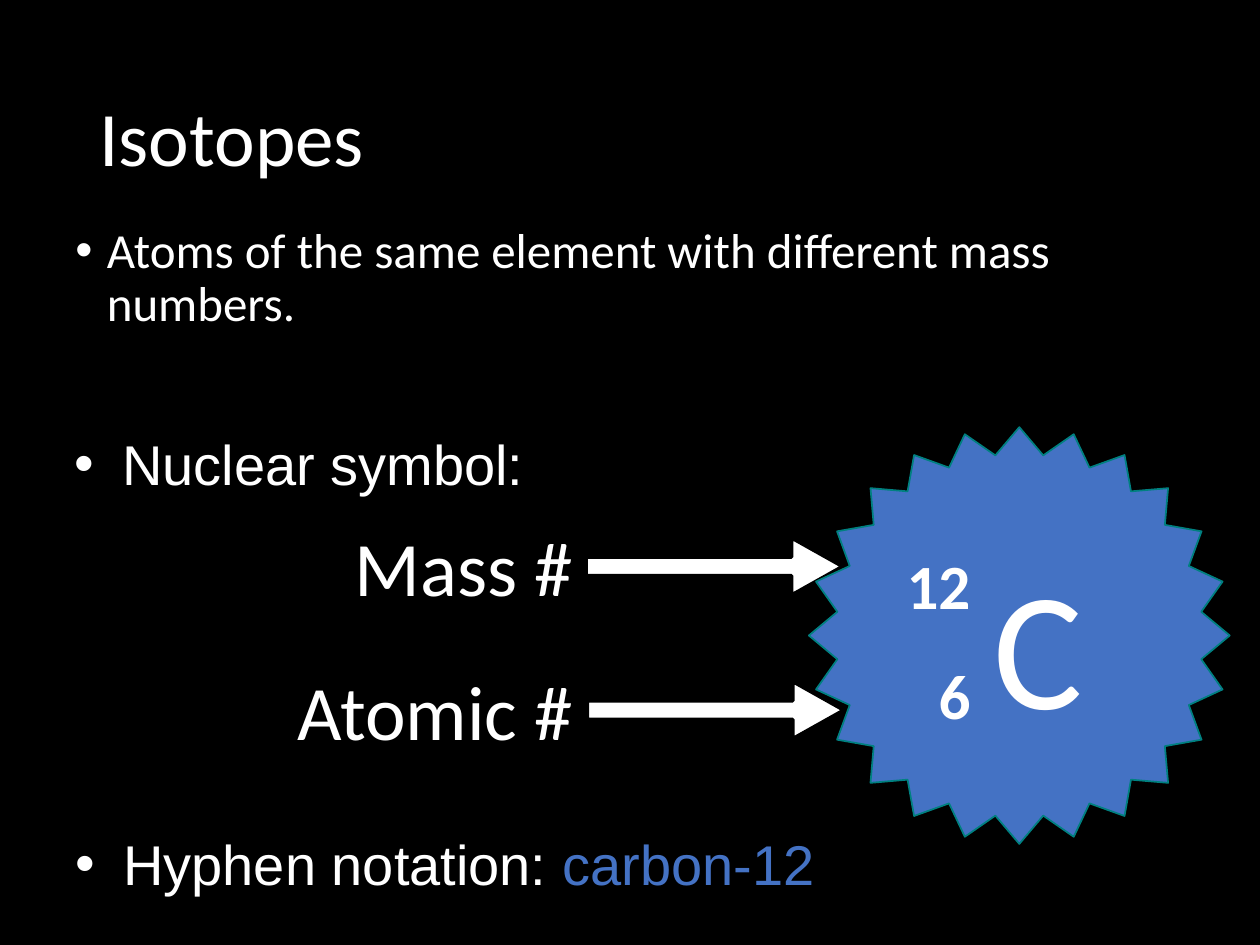
from dataclasses import dataclass

import pptx
import pptx.dml.color
import pptx.enum.shapes
import pptx.enum.text
import pptx.oxml
import pptx.oxml.ns
import pptx.util
from lxml import etree

WIDTH, HEIGHT = 10, 7.5
WHITE, BLACK, BLUE, TEAL = "FFFFFF", "000000", "4472C4", "008080"
ALIGN = pptx.enum.text.PP_ALIGN
SHAPES = pptx.enum.shapes.MSO_SHAPE


@dataclass
class Box:
    """Position and size as shares of the slide."""
    left: float
    top: float
    width: float
    height: float

    def place(self) -> list:
        return [pptx.util.Inches(share * side) for share, side in
                zip((self.left, self.top, self.width, self.height),
                    (WIDTH, HEIGHT, WIDTH, HEIGHT))]


@dataclass
class Style:
    size: float
    font: str = "Calibri"
    bold: bool = False
    align: ALIGN = ALIGN.LEFT
    indent: float = 0  # hanging indent in inches; above zero adds a bullet
    line_spacing: float = 1.0
    gap: float = 0  # points between paragraphs


@dataclass
class Label:
    text: str
    text_box: Box
    arrow_box: Box


def color(value: str) -> pptx.dml.color.RGBColor:
    return pptx.dml.color.RGBColor.from_string(value)


def format_paragraph(paragraph, style: Style) -> None:
    paragraph.font.size = pptx.util.Pt(style.size)
    paragraph.font.name = style.font
    paragraph.font.bold = style.bold
    paragraph.font.color.rgb = color(WHITE)
    paragraph.alignment = style.align
    paragraph.line_spacing = style.line_spacing
    if style.indent:
        properties = paragraph._p.get_or_add_pPr()
        indent = pptx.util.Inches(style.indent)
        properties.set("marL", str(indent))
        properties.set("indent", str(-indent))
        bullet_font = pptx.oxml.parse_xml(
            f'<a:buFont {pptx.oxml.ns.nsdecls("a")} typeface="Arial"/>')
        bullet = etree.Element(pptx.oxml.ns.qn("a:buChar"), char="•")
        properties.insert_element_before(bullet_font, "a:defRPr")
        properties.insert_element_before(bullet, "a:defRPr")


def add_text(slide, box: Box, lines: list[str], style: Style):
    shape = slide.shapes.add_textbox(*box.place())
    frame = shape.text_frame
    frame.word_wrap = True
    frame.text = "\n".join(lines)
    for number, paragraph in enumerate(frame.paragraphs):
        format_paragraph(paragraph, style)
        if number:
            paragraph.space_before = pptx.util.Pt(style.gap)
    return shape


def add_shape(slide, kind: SHAPES, box: Box, adjustments: list[float],
              fill: str, line: str, line_width: float) -> None:
    shape = slide.shapes.add_shape(kind, *box.place())
    shape.shadow.inherit = False
    for number, value in enumerate(adjustments):
        shape.adjustments[number] = value
    shape.fill.solid()
    shape.fill.fore_color.rgb = color(fill)
    shape.line.color.rgb = color(line)
    shape.line.width = pptx.util.Pt(line_width)


def main() -> None:
    presentation = pptx.Presentation()
    presentation.slide_width = pptx.util.Inches(WIDTH)
    presentation.slide_height = pptx.util.Inches(HEIGHT)
    slide = presentation.slides.add_slide(presentation.slide_layouts[5])
    slide.background.fill.solid()
    slide.background.fill.fore_color.rgb = color(BLACK)

    # Title
    title = slide.shapes.title
    title.left, title.top, title.width, title.height = Box(
        0.069, 0.053, 0.862, 0.193).place()
    title.text_frame.text = "Isotopes"
    title.text_frame.vertical_anchor = pptx.enum.text.MSO_ANCHOR.MIDDLE
    format_paragraph(title.text_frame.paragraphs[0],
                     Style(44, line_spacing=0.9))

    # Definition
    add_text(slide, Box(0.05, 0.233, 0.9, 0.22),
             ["Atoms of the same element with different mass numbers."],
             Style(28, indent=0.25, line_spacing=0.9))

    # Labels with arrows towards the symbol
    labels = [
        Label("Mass #", Box(0.202, 0.543, 0.263, 0.111),
              Box(0.465, 0.569, 0.204, 0.061)),
        Label("Atomic #", Box(0.202, 0.696, 0.263, 0.111),
              Box(0.466, 0.721, 0.204, 0.061)),
    ]
    for label in labels:
        add_text(slide, label.text_box, [label.text],
                 Style(44, align=ALIGN.RIGHT))
        add_shape(slide, SHAPES.RIGHT_ARROW, label.arrow_box, [0.328, 0.891],
                  WHITE, BLACK, 2.25)

    # Notation bullets
    bullet_style = Style(32, font="Arial", indent=0.38)
    add_text(slide, Box(0.049, 0.448, 0.459, 0.117), ["Nuclear symbol:"],
             bullet_style)
    notation = add_text(slide, Box(0.05, 0.871, 0.769, 0.085),
                        ["Hyphen notation: "], bullet_style)
    isotope = notation.text_frame.paragraphs[0].add_run()
    isotope.text = "carbon-12"
    isotope.font.color.rgb = color(BLUE)

    # Nuclear symbol on a star
    add_shape(slide, SHAPES.STAR_24_POINT, Box(0.642, 0.452, 0.334, 0.441),
              [0.436], BLUE, TEAL, 1)
    add_text(slide, Box(0.699, 0.572, 0.081, 0.21), ["12", "6"],
             Style(36, bold=True, align=ALIGN.RIGHT, gap=19.5))
    add_text(slide, Box(0.779, 0.567, 0.116, 0.227), ["C"], Style(96))

    presentation.save("out.pptx")


if __name__ == "__main__":
    main()
